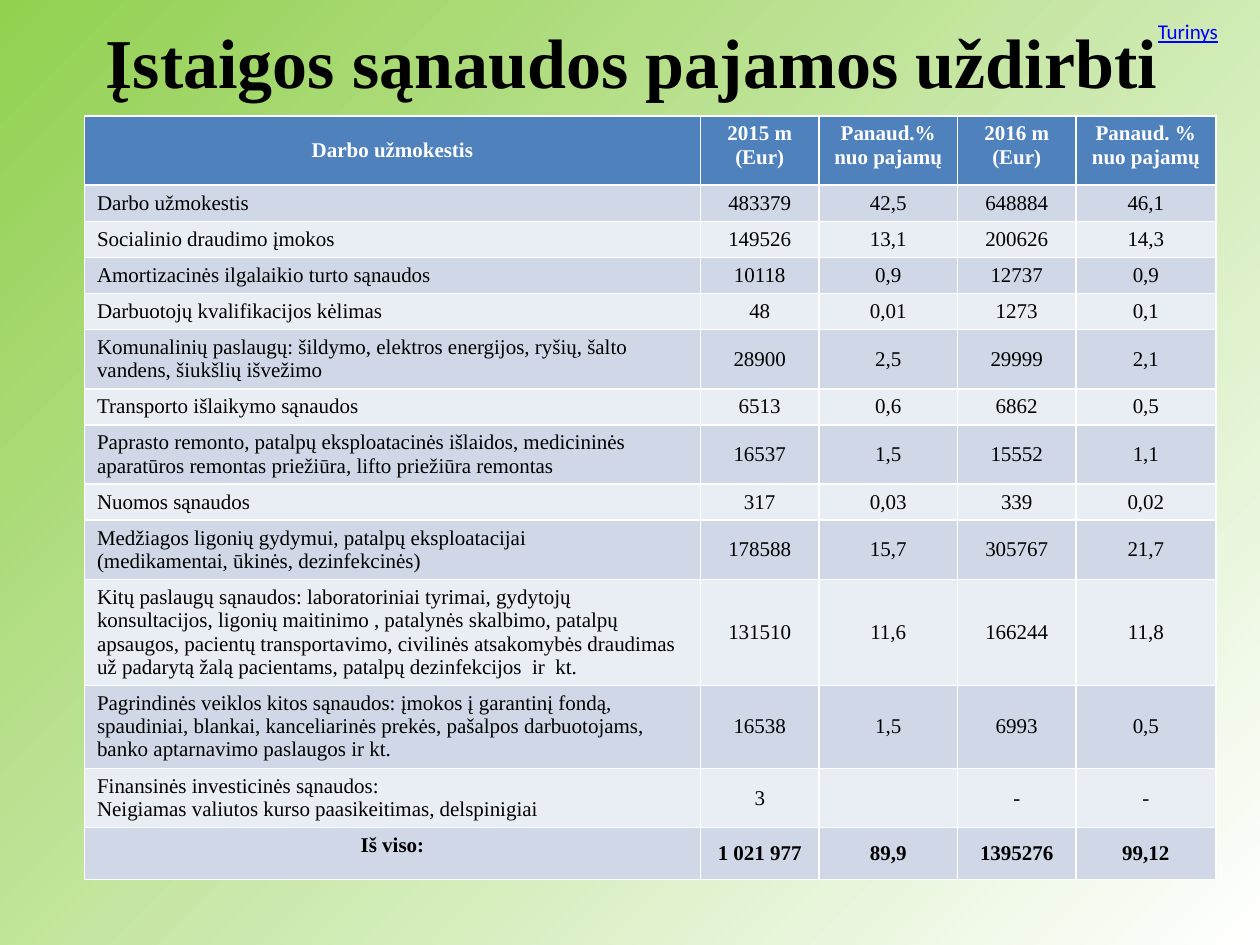
from dataclasses import dataclass

from pptx import Presentation
from pptx.dml.color import RGBColor
from pptx.enum.text import MSO_ANCHOR as Anchor, PP_ALIGN as Align
from pptx.util import Inches, Pt

COLORS = {
    "green": "92D050",
    "white": "FFFFFF",
    "black": "000000",
    "link": "0000FF",
    "header": "4F81BD",
    "band_dark": "D0D8E8",
    "band_light": "E9EDF4",
}
SERIF = "Times New Roman"


@dataclass
class CostRow:
    label: str
    values: tuple[str, ...]
    height: float
    bold: bool = False


HEADER = CostRow(
    "Darbo užmokestis",
    ("2015 m (Eur)", "Panaud.% nuo pajamų", "2016 m (Eur)", "Panaud. % nuo pajamų"),
    0.55, True,
)
COSTS = [
    CostRow("Darbo užmokestis", ("483379", "42,5", "648884", "46,1"), 0.29),
    CostRow("Socialinio draudimo įmokos", ("149526", "13,1", "200626", "14,3"), 0.28),
    CostRow("Amortizacinės ilgalaikio turto sąnaudos", ("10118", "0,9", "12737", "0,9"), 0.28),
    CostRow("Darbuotojų kvalifikacijos kėlimas", ("48", "0,01", "1273", "0,1"), 0.28),
    CostRow("Komunalinių paslaugų: šildymo, elektros energijos, ryšių, šalto vandens, "
            "šiukšlių išvežimo", ("28900", "2,5", "29999", "2,1"), 0.47),
    CostRow("Transporto išlaikymo sąnaudos", ("6513", "0,6", "6862", "0,5"), 0.28),
    CostRow("Paprasto remonto, patalpų eksploatacinės išlaidos, medicininės aparatūros "
            "remontas priežiūra, lifto priežiūra remontas",
            ("16537", "1,5", "15552", "1,1"), 0.47),
    CostRow("Nuomos sąnaudos", ("317", "0,03", "339", "0,02"), 0.28),
    CostRow("Medžiagos ligonių gydymui, patalpų eksploatacijai\n"
            "(medikamentai, ūkinės, dezinfekcinės)",
            ("178588", "15,7", "305767", "21,7"), 0.47),
    CostRow("Kitų paslaugų sąnaudos: laboratoriniai tyrimai, gydytojų konsultacijos, "
            "ligonių maitinimo , patalynės skalbimo, patalpų apsaugos, pacientų "
            "transportavimo, civilinės atsakomybės draudimas už padarytą žalą "
            "pacientams, patalpų dezinfekcijos  ir  kt.",
            ("131510", "11,6", "166244", "11,8"), 0.84),
    CostRow("Pagrindinės veiklos kitos sąnaudos: įmokos į garantinį fondą, spaudiniai, "
            "blankai, kanceliarinės prekės, pašalpos darbuotojams, banko aptarnavimo "
            "paslaugos ir kt.", ("16538", "1,5", "6993", "0,5"), 0.66),
    CostRow("Finansinės investicinės sąnaudos:\n"
            "Neigiamas valiutos kurso paasikeitimas, delspinigiai",
            ("3", "", "-", "-"), 0.47),
    CostRow("Iš viso:", ("1 021 977", "89,9", "1395276", "99,12"), 0.41, True),
]
COLUMN_WIDTHS = (4.89, 0.94, 1.1, 0.94, 1.11)


def rgb(name: str) -> RGBColor:
    return RGBColor.from_string(COLORS[name])


def write_text(frame, text: str, size: float, color: str, font: str = SERIF,
               bold: bool = False, underline: bool = False, align=Align.LEFT) -> None:
    for index, line in enumerate(text.split("\n")):
        paragraph = frame.add_paragraph() if index else frame.paragraphs[0]
        paragraph.alignment = align
        run = paragraph.add_run()
        run.text = line
        run.font.name = font
        run.font.size = Pt(size)
        run.font.bold = bold
        run.font.underline = underline
        run.font.color.rgb = rgb(color)


def fill_row(table, index: int, row: CostRow) -> None:
    is_header = index == 0
    fill = "header" if is_header else "band_dark" if index % 2 else "band_light"
    table.rows[index].height = Inches(row.height)
    for column, text in enumerate((row.label, *row.values)):
        cell = table.cell(index, column)
        cell.fill.solid()
        cell.fill.fore_color.rgb = rgb(fill)
        # The header centres its label vertically, the other rows their values
        cell.vertical_anchor = Anchor.MIDDLE if is_header == (column == 0) else Anchor.TOP
        write_text(cell.text_frame, text, 12, "white" if is_header else "black",
                   bold=row.bold,
                   align=Align.CENTER if column or row.bold else Align.LEFT)


def main() -> None:
    presentation = Presentation()
    presentation.slide_width, presentation.slide_height = Inches(10), Inches(7.5)
    slide = presentation.slides.add_slide(presentation.slide_layouts[5])

    # Background gradient
    background = slide.background.fill
    background.gradient()
    background.gradient_angle = 315
    for stop, position, color in zip(background.gradient_stops, (0, 1), ("green", "white")):
        stop.position = position
        stop.color.rgb = rgb(color)

    # Title
    title = slide.shapes.title
    title.left, title.top = Inches(0.51), Inches(0.21)
    title.width, title.height = Inches(9), Inches(0.54)
    title.text_frame.vertical_anchor = Anchor.MIDDLE
    write_text(title.text_frame, "Įstaigos sąnaudos pajamos uždirbti", 40, "black",
               bold=True, align=Align.CENTER)

    # Cost table
    rows = [HEADER, *COSTS]
    table = slide.shapes.add_table(
        len(rows), len(COLUMN_WIDTHS), Inches(0.67), Inches(0.92),
        Inches(sum(COLUMN_WIDTHS)), Inches(sum(row.height for row in rows)),
    ).table
    for column, width in zip(table.columns, COLUMN_WIDTHS):
        column.width = Inches(width)
    for index, row in enumerate(rows):
        fill_row(table, index, row)

    # Contents label
    contents = slide.shapes.add_textbox(Inches(9.09), Inches(0.1), Inches(0.91), Inches(0.3))
    contents.text_frame.word_wrap = True
    contents.text_frame.vertical_anchor = Anchor.MIDDLE
    write_text(contents.text_frame, "Turinys", 12, "link", font="Calibri", underline=True)

    presentation.save("out.pptx")


if __name__ == "__main__":
    main()
